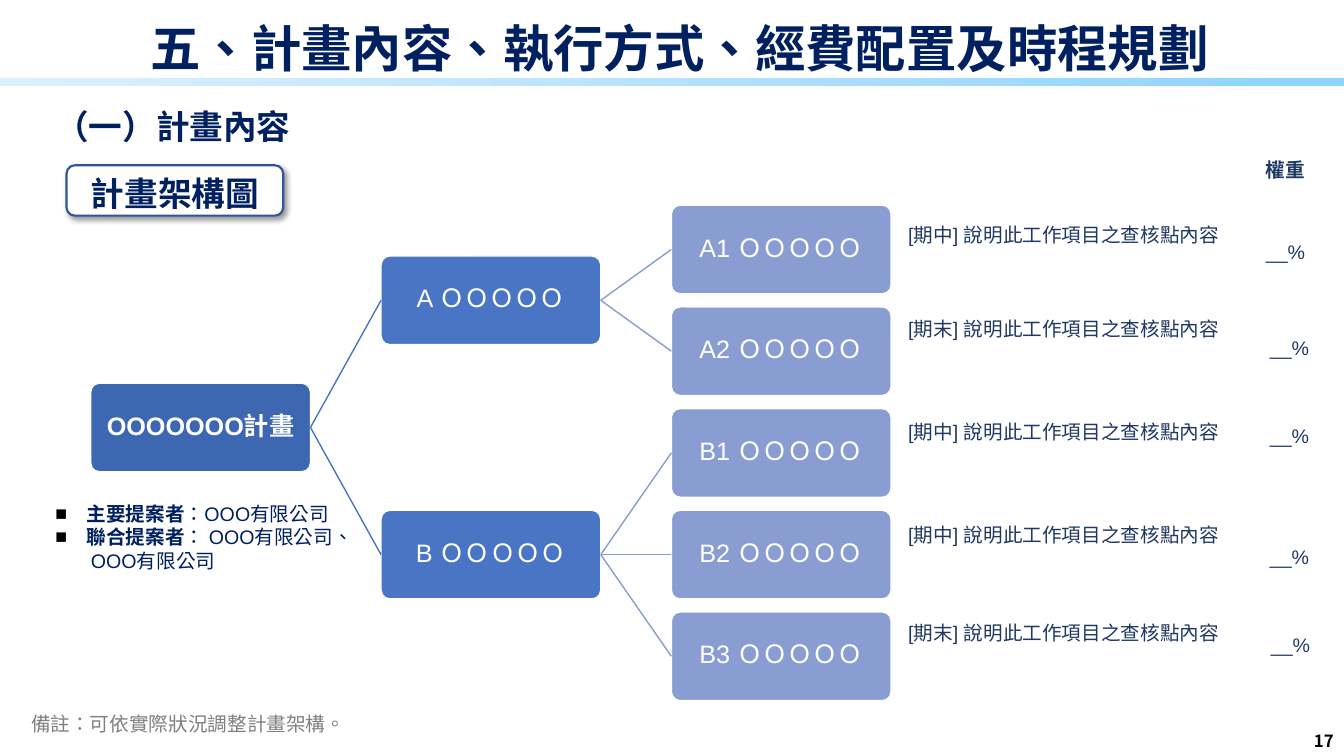
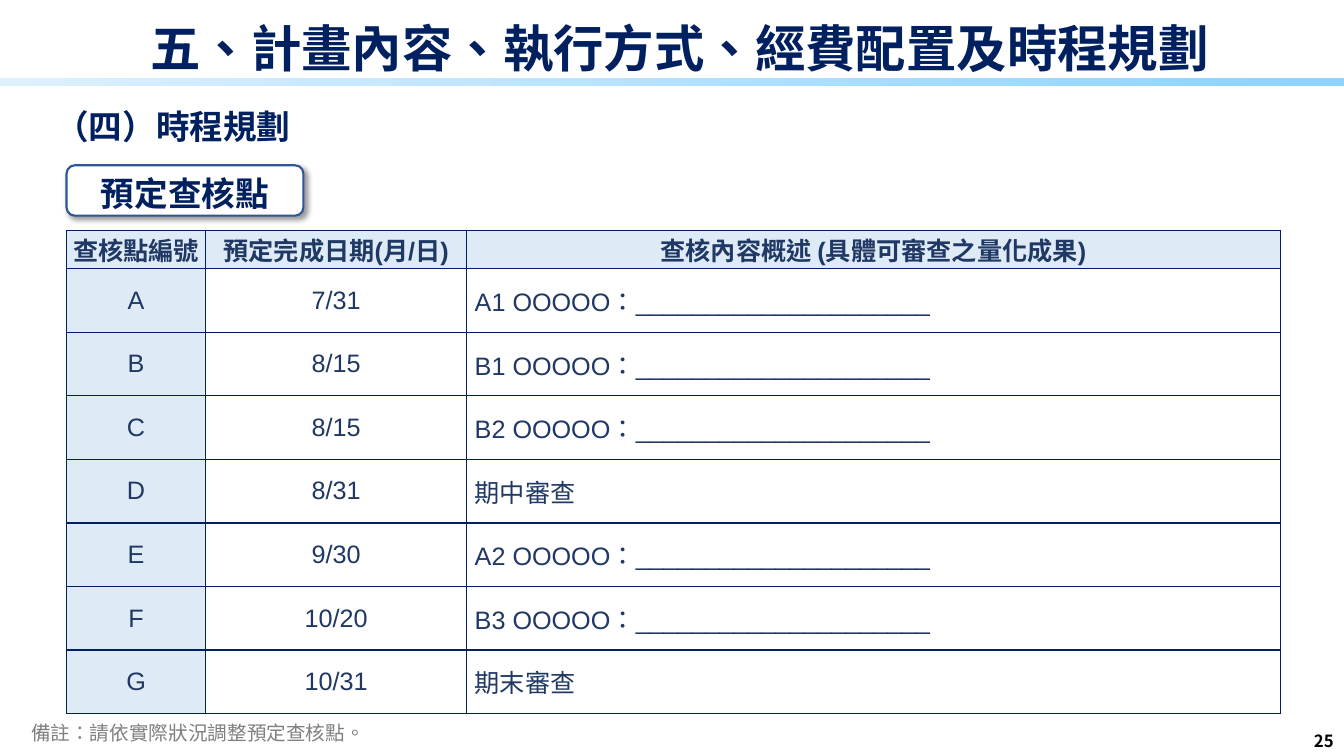
import pptx
import pptx.util
import pptx.dml.color
import pptx.enum.dml
import pptx.enum.lang
import pptx.enum.shapes
import pptx.enum.text
import pptx.oxml.ns
from lxml import etree

Pt = pptx.util.Pt
rgb = pptx.dml.color.RGBColor.from_string
qn = pptx.oxml.ns.qn
ALIGN = pptx.enum.text.PP_ALIGN
MIDDLE = pptx.enum.text.MSO_ANCHOR.MIDDLE
SHAPE = pptx.enum.shapes.MSO_SHAPE
CELL = pptx.util.Inches(0.1)  # the slide is a grid of 133.3 columns and 75 rows
CJK, LATIN = "Noto Sans CJK SC", "Arial"
NAVY, INK, GREY, WHITE, PALE = "002060", "203864", "808080", "FFFFFF", "DEEBF7"

prs = pptx.Presentation()
prs.slide_width, prs.slide_height = int(133.33 * CELL), 75 * CELL


def box(s, at, kind=None, fill=None, line=None, **frame):
    """Add a text box, or a preset shape of the given kind, at grid cells."""
    at = [int(n * CELL) for n in at]
    if kind is None:
        sp = s.shapes.add_textbox(*at)
    else:
        sp = s.shapes.add_shape(kind, *at)
        sp.shadow.inherit = False
        if fill:
            sp.fill.solid()
            sp.fill.fore_color.rgb = rgb(fill)
        if line:
            sp.line.color.rgb, sp.line.width = rgb(line[0]), Pt(line[1])
        else:
            sp.line.fill.background()
    for name, value in {"word_wrap": True, **frame}.items():
        setattr(sp.text_frame, name, value)
    return sp


def write(p, text, color, size, font=LATIN, bold=False, **para):
    """Add a run to a paragraph and format both."""
    for name, value in para.items():
        setattr(p, name, value)
    r = p.add_run()
    r.text = text
    look = {"size": Pt(size), "bold": bold, "name": font,
            "language_id": pptx.enum.lang.MSO_LANGUAGE_ID.TRADITIONAL_CHINESE}
    for name, value in look.items():
        setattr(r.font, name, value)
    r.font.color.rgb = rgb(color)
    etree.SubElement(r.font._element, qn("a:ea"), typeface=CJK)


# What both slides share
pages = [
    ("17", "（一）計畫內容", "計畫架構圖", 21.5, "備註：可依實際狀況調整計畫架構。", 70.1),
    ("25", "（四）時程規劃", "預定查核點", 23.5, "備註：請依實際狀況調整預定查核點。", 71),
]
for number, heading, badge, badge_width, note, note_top in pages:
    s = prs.slides.add_slide(prs.slide_layouts[5])
    band = box(s, (-0.1, 7.7, 133.6, 0.8), SHAPE.RECTANGLE)
    band.fill.gradient()
    band.fill.gradient_angle = 0
    for stop, color in zip(band.fill.gradient_stops, ("DDF0FE", "8CD3FF")):
        stop.color.rgb = rgb(color)

    title = s.shapes.title
    place = {"left": 9.9, "top": 1.8, "width": 115, "height": 6.5}
    for name, cells in place.items():
        setattr(title, name, int(cells * CELL))
    title.text_frame.auto_size = pptx.enum.text.MSO_AUTO_SIZE.NONE
    title.text_frame.vertical_anchor = MIDDLE
    write(title.text_frame.paragraphs[0], "五、計畫內容、執行方式、經費配置及時程規劃",
          NAVY, 36, CJK, True, alignment=ALIGN.CENTER, line_spacing=0.9)

    sp = box(s, (125.7, 71, 7.6, 5), vertical_anchor=MIDDLE)
    write(sp.text_frame.paragraphs[0], number, "000000", 12, CJK, True, alignment=ALIGN.RIGHT)
    sp = box(s, (4.5, 10, 25.6, 5), word_wrap=False)
    write(sp.text_frame.paragraphs[0], heading, NAVY, 24, CJK, True)
    sp = box(s, (2.1, note_top, 58, 3.4))
    write(sp.text_frame.paragraphs[0], note, GREY, 14, CJK)

    sp = box(s, (6.6, 16.4, badge_width, 5), SHAPE.ROUNDED_RECTANGLE, WHITE, ("2F5597", 1.5),
             vertical_anchor=pptx.enum.text.MSO_ANCHOR.TOP)
    write(sp.text_frame.paragraphs[0], badge, NAVY, 24, bold=True, alignment=ALIGN.CENTER)
    shadow = etree.SubElement(
        sp._element.spPr.find(qn("a:effectLst")), qn("a:outerShdw"), blurRad=str(Pt(4)),
        dist=str(Pt(3)), dir="2700000", algn="tl", rotWithShape="0")
    black = etree.SubElement(shadow, qn("a:srgbClr"), val="000000")
    etree.SubElement(black, qn("a:alpha"), val="40000")

# Structure tree: name, text, parent, column, row
s = prs.slides[0]
tree = [
    ("root", "OOOOOOO計畫", None, 0, 1.75),
    ("A", "A ＯＯＯＯＯ", "root", 1, 0.5),
    ("A1", "A1 ＯＯＯＯＯ", "A", 2, 0),
    ("A2", "A2 ＯＯＯＯＯ", "A", 2, 1),
    ("B", "B ＯＯＯＯＯ", "root", 1, 3),
    ("B1", "B1 ＯＯＯＯＯ", "B", 2, 2),
    ("B2", "B2 ＯＯＯＯＯ", "B", 2, 3),
    ("B3", "B3 ＯＯＯＯＯ", "B", 2, 4),
]
level_colors = ["3E67B2", "4A75C5", "899DD2"]
insets = {"margin_" + side: CELL // 10 for side in ("left", "right", "top", "bottom")}
nodes = {}
for name, text, parent, col, row in tree:
    color = level_colors[col]
    sp = nodes[name] = box(
        s, (9 + 28.8 * col, 20.35 + 10.09 * row, 21.8, 8.8), SHAPE.ROUNDED_RECTANGLE,
        color, (WHITE, 1), vertical_anchor=MIDDLE, **insets)
    sp.adjustments[0] = 0.1
    write(sp.text_frame.paragraphs[0], text, WHITE, 18, bold=parent is None,
          alignment=ALIGN.CENTER, line_spacing=Pt(18))
    if parent:
        link = s.shapes.add_connector(pptx.enum.shapes.MSO_CONNECTOR.STRAIGHT, 0, 0, 0, 0)
        link.begin_connect(nodes[parent], 3)
        link.end_connect(sp, 1)
        link.line.color.rgb, link.line.width = rgb(color), Pt(1)
        etree.SubElement(link._element.spPr, qn("a:effectLst"))

# Checkpoints and weights: term, text top, weight left, weight top
sp = box(s, (124.6, 15.2, 8.7, 3.4))
write(sp.text_frame.paragraphs[0], "權重", INK, 14, bold=True, alignment=ALIGN.JUSTIFY)
checkpoints = [
    ("期中", 21.6, 124.6, 23.3),
    ("期末", 30.9, 125, 32.8),
    ("期中", 41.2, 125, 41.6),
    ("期中", 51.4, 125, 53.6),
    ("期末", 61.1, 125.1, 62.3),
]
for term, top, weight_left, weight_top in checkpoints:
    for at, text in [((89.1, top, 33.1, 8.1), f"[{term}] 說明此工作項目之查核點內容"),
                     ((weight_left, weight_top, 6.3, 3.4), "__%")]:
        sp = box(s, at)
        write(sp.text_frame.paragraphs[0], text, INK, 14, alignment=ALIGN.JUSTIFY)

# Proposers
tf = box(s, (4.5, 49.3, 31.2, 11.3)).text_frame
proposers = [("主要提案者", "：OOO有限公司"), ("聯合提案者", "： OOO有限公司、 OOO有限公司")]
for i, (role, company) in enumerate(proposers):
    p = tf.add_paragraph() if i else tf.paragraphs[0]
    pPr = p._p.get_or_add_pPr()
    pPr.set("marL", str(int(3.1 * CELL)))
    pPr.set("indent", str(int(-3.1 * CELL)))
    etree.SubElement(etree.SubElement(pPr, qn("a:buClr")), qn("a:srgbClr"), val="000000")
    etree.SubElement(pPr, qn("a:buFont"), typeface=LATIN)
    etree.SubElement(pPr, qn("a:buChar"), char="■")
    write(p, role, NAVY, 14, bold=True)
    write(p, company, NAVY, 14)

# Schedule table
s = prs.slides[1]
blank = "：" + "_" * 21
rows = [
    ("查核點編號", "預定完成日期(月/日)", "查核內容概述 (具體可審查之量化成果)"),
    ("A", "7/31", "A1 OOOOO" + blank),
    ("B", "8/15", "B1 OOOOO" + blank),
    ("C", "8/15", "B2 OOOOO" + blank),
    ("D", "8/31", "期中審查"),
    ("E", "9/30", "A2 OOOOO" + blank),
    ("F", "10/20", "B3 OOOOO" + blank),
    ("G", "10/31", "期末審查"),
]
widths = [13.8, 25.9, 80.7]
heights = [3.75] + [6.31] * 7
at = [int(n * CELL) for n in (6.6, 22.9, sum(widths), sum(heights))]
table = s.shapes.add_table(len(rows), len(widths), *at).table
table.first_row = table.horz_banding = False
for column, width in zip(table.columns, widths):
    column.width = int(width * CELL)
for i, (height, row) in enumerate(zip(heights, rows)):
    table.rows[i].height = int(height * CELL)
    for j, text in enumerate(row):
        cell = table.cell(i, j)
        summary = i > 0 and j == 2
        layout = {"vertical_anchor": MIDDLE, "margin_top": 0, "margin_bottom": 0,
                  "margin_left": int((0.8 if summary else 0.1) * CELL),
                  "margin_right": CELL // 10}
        for name, value in layout.items():
            setattr(cell, name, value)
        write(cell.text_frame.paragraphs[0], text, INK, 18, bold=i == 0,
              alignment=ALIGN.LEFT if summary else ALIGN.CENTER)
        tcPr = cell._tc.get_or_add_tcPr()
        for side in ("a:lnL", "a:lnR", "a:lnT", "a:lnB"):
            ln = etree.SubElement(tcPr, qn(side), w=str(Pt(1)))
            etree.SubElement(etree.SubElement(ln, qn("a:solidFill")), qn("a:srgbClr"), val=NAVY)
        if i == 0 or j == 0:
            cell.fill.solid()
            cell.fill.fore_color.rgb = rgb(PALE)
        else:
            cell.fill.background()

prs.save("out.pptx")
